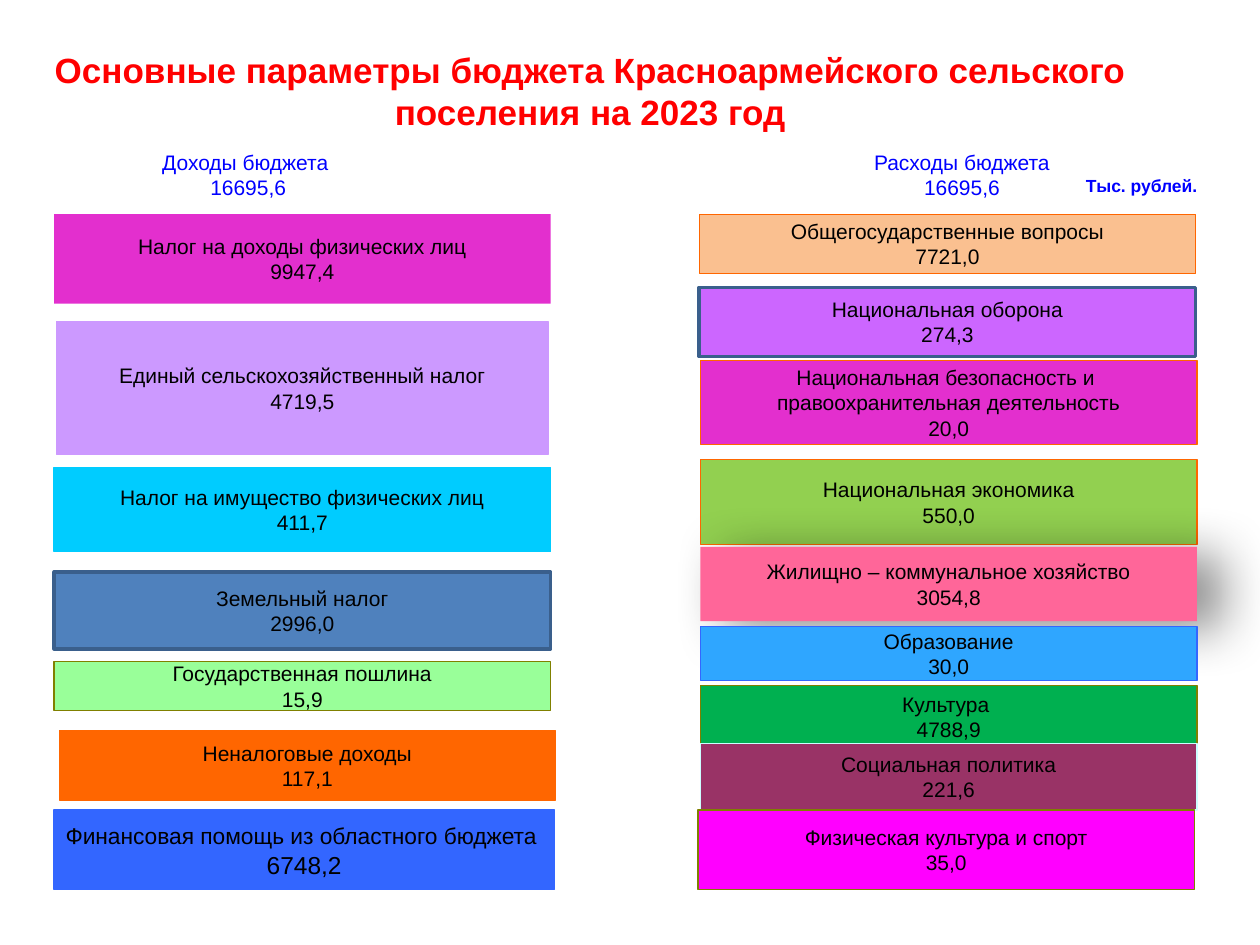
from dataclasses import dataclass

from lxml import etree
from pptx import Presentation
from pptx.dml.color import RGBColor
from pptx.enum.shapes import MSO_SHAPE
from pptx.enum.text import MSO_ANCHOR, PP_ALIGN
from pptx.oxml.ns import qn
from pptx.util import Inches, Pt

RECT = MSO_SHAPE.RECTANGLE
MIDDLE = MSO_ANCHOR.MIDDLE
CENTER = PP_ALIGN.CENTER


@dataclass(frozen=True)
class Theme:
    font: str = "Arial"
    title_size: int = 20
    body_size: int = 12
    unit_size: int = 10
    aid_size: int = 13
    aid_value_size: int = 14
    thin: float = 0.75
    thick: float = 2
    red: str = "FF0000"
    blue: str = "0000FF"
    black: str = "000000"
    white: str = "FFFFFF"
    magenta: str = "E32FCE"
    lilac: str = "CC99FF"
    violet: str = "CC66FF"
    cyan: str = "00CCFF"
    steel: str = "4F81BD"
    navy: str = "3A5F8C"
    mint: str = "99FF99"
    olive: str = "808000"
    orange: str = "FF6600"
    royal: str = "3366FF"
    peach: str = "FAC090"
    lime: str = "92D050"
    pink: str = "FF6699"
    sky: str = "2FA6FF"
    green: str = "00B050"
    plum: str = "993366"
    ice: str = "CCFFFF"
    fuchsia: str = "FF00FF"


class SlideBuilder:
    def __init__(self, slide, theme):
        self.s = slide
        self.theme = theme

    def add_text(self, sp, paragraphs, color, bold=False, wrap=False):
        """Each paragraph is a list of (text, size) runs."""
        tf = sp.text_frame
        tf.word_wrap = wrap
        tf.vertical_anchor = MIDDLE
        for i, runs in enumerate(paragraphs):
            p = tf.paragraphs[0] if i == 0 else tf.add_paragraph()
            p.alignment = CENTER
            for text, size in runs:
                r = p.add_run()
                r.text = text
                r.font.name = self.theme.font
                r.font.size = Pt(size)
                r.font.bold = bold
                r.font.color.rgb = RGBColor.from_string(color)

    def title(self, text, left, top, width, height):
        sp = self.s.shapes.add_textbox(
            Inches(left), Inches(top), Inches(width), Inches(height))
        self.add_text(sp, [[(text, self.theme.title_size)]], self.theme.red,
                      bold=True, wrap=True)

    def box(self, place, paragraphs, fill=None, line=None, weight=None,
            color=None, bold=False, wrap=False):
        sp = self.s.shapes.add_shape(RECT, *map(Inches, place))
        sp.shadow.inherit = False
        if fill:
            sp.fill.solid()
            sp.fill.fore_color.rgb = RGBColor.from_string(fill)
        else:
            sp.fill.background()
        if line:
            sp.line.color.rgb = RGBColor.from_string(line)
            sp.line.width = Pt(weight or self.theme.thin)
        else:
            sp.line.fill.background()
        self.add_text(sp, paragraphs, color or self.theme.black, bold, wrap)
        return sp

    def lines(self, *texts):
        return [[(text, self.theme.body_size)] for text in texts]

    def shadow(self, sp, blur, distance, angle, opacity):
        effects = sp._element.spPr.find(qn("a:effectLst"))
        outer = etree.SubElement(
            effects, qn("a:outerShdw"), blurRad=str(Pt(blur)),
            dist=str(Pt(distance)), dir=str(angle * 60000),
            algn="ctr", rotWithShape="0")
        clr = etree.SubElement(outer, qn("a:srgbClr"), val=self.theme.black)
        etree.SubElement(clr, qn("a:alpha"), val=str(opacity * 1000))


def main():
    prs = Presentation()
    prs.slide_width, prs.slide_height = Inches(10), Inches(7.5)
    t = Theme()
    b = SlideBuilder(prs.slides.add_slide(prs.slide_layouts[6]), t)
    bar_width = 3.94

    # Title
    b.title("Основные параметры бюджета Красноармейского сельского "
            "поселения на 2023 год", 0, 0.28, 9.37, 0.87)

    # Column headings and unit
    for left, width, name in ((0.83, 2.28, "Доходы бюджета "),
                              (6.57, 2.13, "Расходы бюджета")):
        b.box((left, 1.15, width, 0.47), b.lines(name, "16695,6"),
              t.white, t.white, color=t.blue)
    b.box((8.47, 1.31, 1.18, 0.32), [[("Тыс. рублей.", t.unit_size)]],
          line=t.white, color=t.blue, bold=True)

    # Income: left, top, width, height, fill, line, texts
    income = [
        (0.43, 1.7, bar_width, 0.71, t.magenta, None,
         "Налог на доходы физических лиц", "9947,4"),
        (0.45, 2.55, 3.9, 1.06, t.lilac, t.lilac,
         "Единый сельскохозяйственный налог", "4719,5"),
        (0.43, 3.71, bar_width, 0.67, t.cyan, t.cyan,
         "Налог на имущество физических лиц", "411,7"),
        (0.43, 4.54, bar_width, 0.61, t.steel, t.navy,
         "Земельный налог", "2996,0"),
        (0.43, 5.25, bar_width, 0.39, t.mint, t.olive,
         "Государственная пошлина", "15,9"),
        (0.47, 5.8, bar_width, 0.55, t.orange, t.orange,
         "Неналоговые доходы", "117,1"),
    ]

    # Spending, same layout
    spending = [
        (5.55, 1.7, bar_width, 0.47, t.peach, t.orange,
         "Общегосударственные вопросы", "7721,0"),
        (5.55, 2.28, bar_width, 0.55, t.violet, t.navy,
         "Национальная оборона", "274,3"),
        (5.56, 2.86, bar_width, 0.67, t.magenta, t.orange,
         "Национальная безопасность и ",
         "правоохранительная деятельность", "20,0"),
        (5.56, 3.65, bar_width, 0.67, t.lime, t.orange,
         "Национальная экономика", "550,0"),
        (5.56, 4.34, bar_width, 0.59, t.pink, None,
         "Жилищно – коммунальное хозяйство", "3054,8"),
        (5.56, 4.97, bar_width, 0.43, t.sky, t.royal,
         "Образование", "30,0"),
        (5.56, 5.44, bar_width, 0.49, t.green, t.olive,
         "Культура ", "4788,9"),
        (5.56, 5.9, bar_width, 0.53, t.plum, t.ice,
         "Социальная политика", "221,6"),
        (5.54, 6.43, bar_width, 0.63, t.fuchsia, t.olive,
         "Физическая культура и спорт", "35,0"),
    ]
    for left, top, width, height, fill, line, *texts in income + spending:
        framed = line == t.navy
        sp = b.box((left, top, width, height), b.lines(*texts), fill, line,
                   t.thick if framed else t.thin, wrap=framed)
        if fill == t.pink:
            b.shadow(sp, blur=30, distance=15, angle=18, opacity=45)

    # Regional aid, in larger type
    b.box((0.43, 6.43, 3.97, 0.63),
          [[("Финансовая помощь из областного бюджета", t.aid_size),
            (" ", t.aid_value_size)],
           [("6748,2", t.aid_value_size)]], t.royal, t.royal)

    prs.save("out.pptx")


if __name__ == "__main__":
    main()
